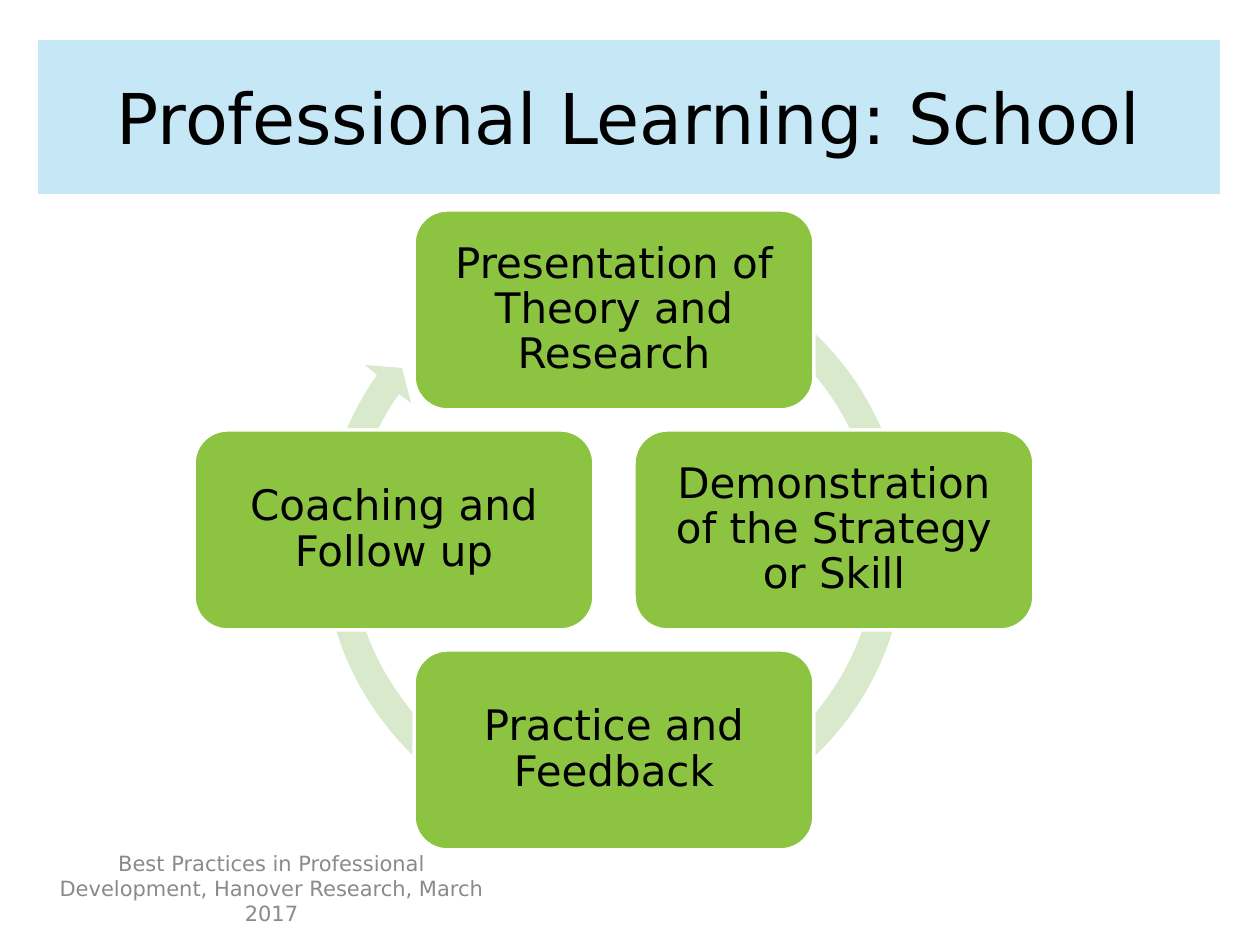
from lxml import etree
from pptx import Presentation
from pptx import util as u
from pptx.dml.color import RGBColor
from pptx.enum import shapes, text
from pptx.oxml.ns import qn

PX = 914400 // 126
FONT = "DejaVu Sans"
TITLE = "Professional Learning: School"
SOURCE = "Best Practices in Professional Development, Hanover Research, March 2017"
MID = (614, 530)
STEP = 220
CARD = (400, 200)
STAGES = [
    ("Practice and Feedback", 0, 1),
    ("Demonstration of the Strategy or Skill", 1, 0),
    ("Presentation of Theory and Research", 0, -1),
    ("Coaching and Follow up", -1, 0),
]
RING = (307, 238, 614, 614)
START = (757, 291)
OUTER = [
    [(863, 350), (920, 469), (902, 588)],
    [(885, 707), (795, 803), (677, 829)],
    [(559, 856), (438, 806), (372, 706)],
    [(305, 605), (307, 474), (377, 375)],
]
HEAD = [[(365, 365)], [(402, 368)], [(411, 403)], [(399, 394)]]
INNER = [
    [(336, 483), (335, 601), (396, 690)],
    [(456, 781), (566, 824), (672, 801)],
    [(777, 777), (858, 690), (874, 583)],
    [(890, 476), (838, 369), (743, 316)],
]


def color(code):
    return RGBColor.from_string(code)


def place(box):
    return [n * PX for n in box]


def draw(items, start, parts, box):
    spots = [spot for part in parts for spot in part]
    pen = items.build_freeform(*start, scale=PX)
    pen.add_line_segments(spots, close=True)
    shape = pen.convert_to_shape()
    left, top, wide, high = box
    shape.left, shape.top, shape.width, shape.height = place(box)
    track = next(shape.element.iter(qn("a:path")))
    track.set("w", str(wide))
    track.set("h", str(high))
    for pt, (x, y) in zip(track.iter(qn("a:pt")), [start] + spots):
        pt.set("x", str(x - left))
        pt.set("y", str(y - top))
    lines = iter(track.findall(qn("a:lnTo")))
    for part in parts:
        group = [next(lines) for _ in part]
        if len(part) == 3:
            curve = etree.Element(qn("a:cubicBezTo"))
            group[0].addprevious(curve)
            for line in group:
                curve.append(line[0])
                track.remove(line)
    return shape


def write(shape, words, size, ink="000000", pad=(13, 6), gap=None):
    frame = shape.text_frame
    frame.word_wrap = True
    frame.vertical_anchor = text.MSO_ANCHOR.MIDDLE
    frame.margin_left = frame.margin_right = pad[0] * PX
    frame.margin_top = frame.margin_bottom = pad[1] * PX
    para = frame.paragraphs[0]
    para.text = words
    para.alignment = text.PP_ALIGN.CENTER
    para.line_spacing = gap
    para.font.name = FONT
    para.font.size = u.Pt(size)
    para.font.color.rgb = color(ink)


def paint(shape, fill, width=0):
    shape.shadow.inherit = False
    shape.fill.solid()
    shape.fill.fore_color.rgb = color(fill)
    if width:
        shape.line.color.rgb = color("FFFFFF")
        shape.line.width = u.Pt(width)
    else:
        shape.line.fill.background()


deck = Presentation()
deck.slide_width, deck.slide_height = place((1260, 945))
slide = deck.slides.add_slide(deck.slide_layouts[6])
items = slide.shapes

note = items.add_textbox(*place((35, 851, 473, 74)))
write(note, SOURCE, 12, "888A8C")

ring = draw(items, START, OUTER + HEAD + INNER, RING)
paint(ring, "D9EACC")

wide, high = CARD
for words, col, row in STAGES:
    left = MID[0] + col * STEP - wide // 2
    top = MID[1] + row * STEP - high // 2
    card = items.add_shape(shapes.MSO_SHAPE.ROUNDED_RECTANGLE,
                           *place((left, top, wide, high)))
    paint(card, "8CC441", 2)
    write(card, words, 24, pad=(10, 10), gap=0.9)

title = items.add_shape(shapes.MSO_SHAPE.RECTANGLE, *place((36, 38, 1186, 158)))
paint(title, "A9DCF2", 2.25)
tint = next(title.element.spPr.iter(qn("a:srgbClr")))
etree.SubElement(tint, qn("a:alpha"), val="67000")
write(title, TITLE, 40)

deck.save("out.pptx")
